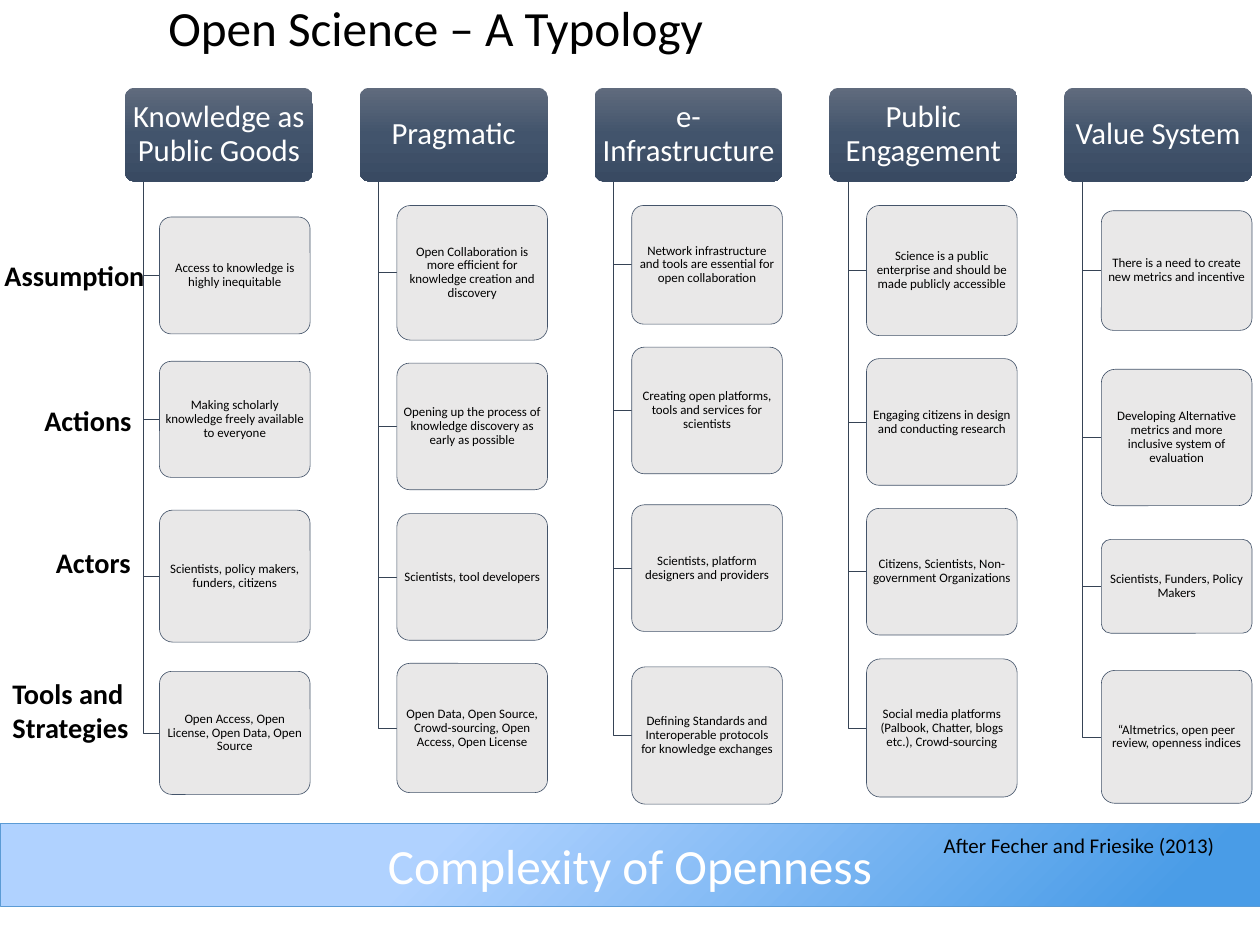
from dataclasses import dataclass

from lxml import etree
from pptx import Presentation
from pptx import util as u
from pptx.dml.color import RGBColor
from pptx.enum import shapes, text
from pptx.oxml import ns, parse_xml


@dataclass(frozen=True)
class Theme:
    font: str = "Calibri"
    ink: str = "000000"
    white: str = "FFFFFF"
    card_fill: str = "E7E6E6"
    card_edge: str = "44546A"
    branch: str = "364355"
    band_edge: str = "5B9BD5"
    header_stops: tuple = ((0, "606B7D"), (50, "42546C"), (100, "394A62"))
    band_stops: tuple = ((7, "499CE7"), (66, "B0D2FF"))
    display_size: float = 40
    header_size: float = 25
    label_size: float = 23
    source_size: float = 17
    card_size: float = 10.5


theme = Theme()


def write(shape, words, size, color, align, inset, spacing=1.0, bold=False):
    """Fill a shape with text and format every run."""
    frame = shape.text_frame
    frame.text = words
    frame.word_wrap = True
    frame.margin_left = frame.margin_right = u.Inches(inset[0])
    frame.margin_top = frame.margin_bottom = u.Inches(inset[1])
    for paragraph in frame.paragraphs:
        paragraph.alignment = align
        paragraph.line_spacing = spacing
        for run in paragraph.runs:
            run.font.name = theme.font
            run.font.size = u.Pt(size)
            run.font.bold = bold
            run.font.color.rgb = RGBColor.from_string(color)
    return frame


def fill_gradient(shape, stops, direction):
    """Replace the fill by a gradient with any number of stops."""
    shape.fill.gradient()
    old = shape._element.spPr.find(ns.qn("a:gradFill"))
    marks = "".join(
        f'<a:gs pos="{pos * 1000}"><a:srgbClr val="{color}"/></a:gs>' for pos, color in stops
    )
    new = parse_xml(
        f'<a:gradFill {ns.nsdecls("a")} rotWithShape="1">'
        f"<a:gsLst>{marks}</a:gsLst>{direction}</a:gradFill>"
    )
    old.getparent().replace(old, new)


center, left = text.PP_ALIGN.CENTER, text.PP_ALIGN.LEFT
middle = text.MSO_ANCHOR.MIDDLE

prs = Presentation()
prs.slide_width, prs.slide_height = u.Inches(14.22), u.Inches(10.67)
slide = prs.slides.add_slide(prs.slide_layouts[5])

# Title
title = slide.shapes.title
title.left, title.top = u.Inches(1.8), u.Inches(-0.54)
title.width, title.height = u.Inches(12.8), u.Inches(1.78)
title_frame = write(title, "Open Science – A Typology", theme.display_size, theme.ink,
                    left, (0.1, 0.05), 0.9)
title_frame.vertical_anchor = middle
title_frame.auto_size = text.MSO_AUTO_SIZE.NONE

# Complexity band
band = slide.shapes.add_shape(shapes.MSO_SHAPE.RECTANGLE, u.Inches(0), u.Inches(9.3),
                              prs.slide_width, u.Inches(0.93))
band.shadow.inherit = False
fill_gradient(band, theme.band_stops,
              '<a:path path="circle"><a:fillToRect l="100000" t="100000"/></a:path>')
band.line.color.rgb = RGBColor.from_string(theme.band_edge)
band.line.width = u.Pt(0.5)
write(band, "Complexity of Openness", theme.display_size, theme.white,
      center, (0.14, 0.07)).vertical_anchor = middle

# Schools of thought: heading, then (top, height, words) for each card
schools = [
    ("Knowledge as Public Goods", [
        (2.45, 1.32, "Access to knowledge is highly inequitable"),
        (4.08, 1.31, "Making scholarly knowledge freely available to everyone"),
        (5.76, 1.49, "Scientists, policy makers, funders, citizens"),
        (7.58, 1.39, "Open Access, Open License, Open Data, Open Source")]),
    ("Pragmatic", [
        (2.32, 1.52, "Open Collaboration is more efficient for knowledge creation and discovery"),
        (4.1, 1.43, "Opening up the process of knowledge discovery as early as possible"),
        (5.8, 1.43, "Scientists, tool developers"),
        (7.49, 1.46, "Open Data, Open Source, Crowd-sourcing, Open Access, Open License")]),
    ("e-Infrastructure", [
        (2.32, 1.34, "Network infrastructure and tools are essential for open collaboration"),
        (3.92, 1.43, "Creating open platforms, tools and services for scientists"),
        (5.7, 1.43, "Scientists, platform designers and providers"),
        (7.53, 1.55, "Defining Standards and Interoperable protocols for knowledge exchanges")]),
    ("Public Engagement", [
        (2.32, 1.47, "Science is a public enterprise and should be made publicly accessible"),
        (4.05, 1.43, "Engaging citizens in design and conducting research"),
        (5.74, 1.43, "Citizens, Scientists, Non-government Organizations"),
        (7.44, 1.56, "Social media platforms (Palbook, Chatter, blogs etc.), Crowd-sourcing")]),
    ("Value System", [
        (2.38, 1.35, "There is a need to create new metrics and incentive"),
        (4.17, 1.54, "Developing Alternative metrics and more inclusive system of evaluation"),
        (6.09, 1.06, "Scientists, Funders, Policy Makers"),
        (7.57, 1.5, "“Altmetrics, open peer review, openness indices")]),
]
header_top, header_width, header_height = 0.99, 2.12, 1.06
header_bottom = header_top + header_height

for column, (heading, cards) in enumerate(schools):
    header_left = 1.41 + 2.65 * column
    spine_x = header_left + 0.21
    card_left = header_left + (0.42 if column else 0.39)

    # Column header
    header = slide.shapes.add_shape(
        shapes.MSO_SHAPE.ROUNDED_RECTANGLE, u.Inches(header_left), u.Inches(header_top),
        u.Inches(header_width), u.Inches(header_height))
    header.adjustments[0] = 0.1
    header.shadow.inherit = False
    header.line.fill.background()
    fill_gradient(header, theme.header_stops, '<a:lin ang="5400000" scaled="0"/>')
    write(header, heading, theme.header_size, theme.white, center,
          (0.05, 0.03), 0.9).vertical_anchor = middle

    for card_top, card_height, words in cards:
        # Branch from the header to the middle of the card
        branch_y = card_top + card_height / 2
        outline = slide.shapes.build_freeform(u.Inches(spine_x), u.Inches(header_bottom))
        outline.add_line_segments(
            [(u.Inches(spine_x), u.Inches(branch_y)),
             (u.Inches(card_left), u.Inches(branch_y))], close=False)
        branch = outline.convert_to_shape()
        branch.shadow.inherit = False
        branch.fill.background()
        branch.line.color.rgb = RGBColor.from_string(theme.branch)
        branch.line.width = u.Pt(0.5)

        # Card
        card = slide.shapes.add_shape(
            shapes.MSO_SHAPE.ROUNDED_RECTANGLE, u.Inches(card_left), u.Inches(card_top),
            u.Inches(1.7), u.Inches(card_height))
        card.adjustments[0] = 0.1
        card.shadow.inherit = False
        card.fill.solid()
        card.fill.fore_color.rgb = RGBColor.from_string(theme.card_fill)
        tint = card._element.spPr.find(ns.qn("a:solidFill"))[0]
        etree.SubElement(tint, ns.qn("a:alpha"), val="90000")
        card.line.color.rgb = RGBColor.from_string(theme.card_edge)
        card.line.width = u.Pt(0.5)
        write(card, words, theme.card_size, theme.ink, center,
              (0.02, 0.02), 0.9).vertical_anchor = middle

# Row labels and source credit
captions = [
    (-0.09, 2.85, 1.89, 0.53, "Assumption", theme.label_size, True),
    (0.36, 4.48, 1.29, 0.53, "Actions", theme.label_size, True),
    (0.49, 6.09, 1.16, 0.53, "Actors", theme.label_size, True),
    (0, 7.57, 1.61, 0.91, "Tools and\nStrategies", theme.label_size, True),
    (10.51, 9.33, 3.39, 0.43, "After Fecher and Friesike (2013)", theme.source_size, False),
]
for x, y, width, height, words, size, bold in captions:
    caption = slide.shapes.add_textbox(u.Inches(x), u.Inches(y), u.Inches(width), u.Inches(height))
    caption_frame = write(caption, words, size, theme.ink, left, (0.14, 0.07), bold=bold)
    caption_frame.word_wrap = False
    caption_frame.auto_size = text.MSO_AUTO_SIZE.SHAPE_TO_FIT_TEXT

prs.save("out.pptx")
